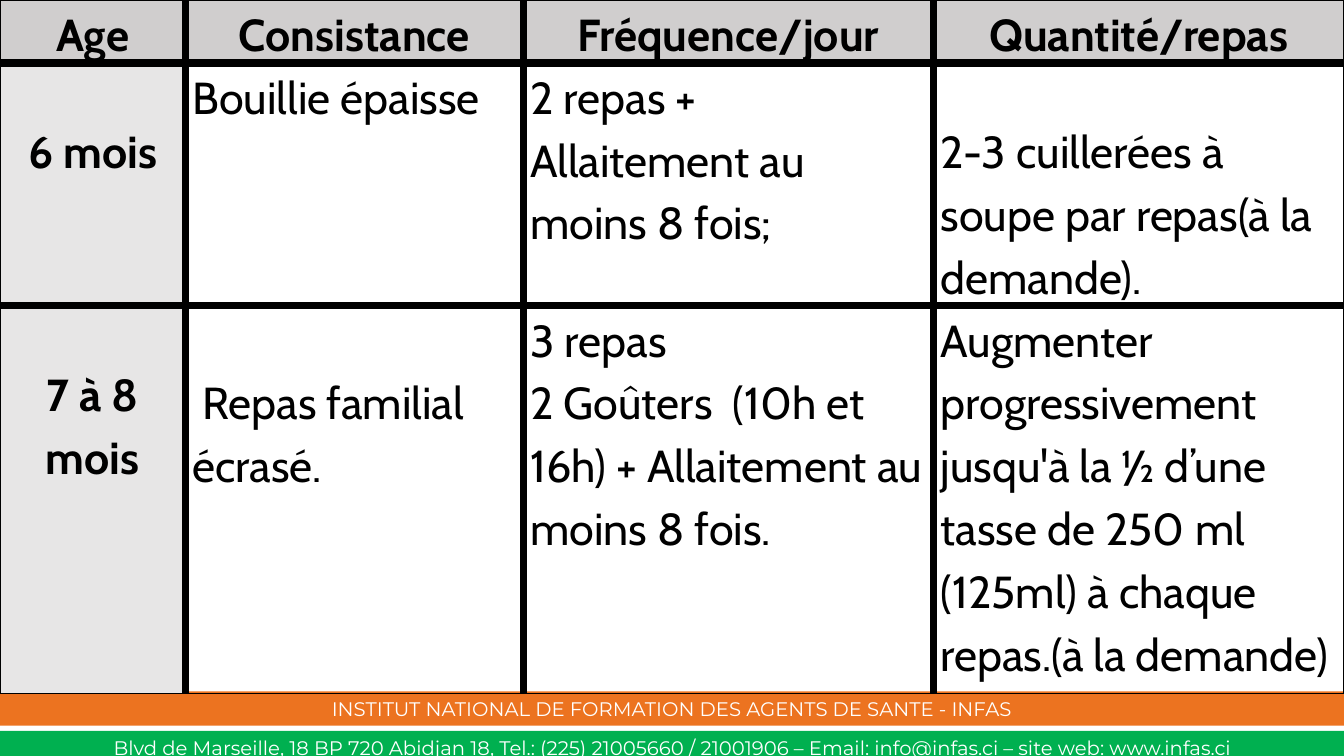
from lxml import etree
from pptx import Presentation
from pptx.dml.color import RGBColor
from pptx.enum.shapes import MSO_SHAPE
from pptx.enum.text import MSO_ANCHOR, PP_ALIGN
from pptx.oxml.ns import qn
from pptx.util import Inches, Pt

RECT = MSO_SHAPE.RECTANGLE
CENTER, LEFT = PP_ALIGN.CENTER, PP_ALIGN.LEFT
MIDDLE, BOTTOM = MSO_ANCHOR.MIDDLE, MSO_ANCHOR.BOTTOM

BLACK = RGBColor(0x00, 0x00, 0x00)
WHITE = RGBColor(0xFF, 0xFF, 0xFF)
HEADER_GRAY = RGBColor(0xD0, 0xCE, 0xCE)
AGE_GRAY = RGBColor(0xE7, 0xE6, 0xE6)
ORANGE = RGBColor(0xEC, 0x73, 0x20)
GREEN = RGBColor(0x00, 0xB0, 0x50)

ROWS = [
    ["Age", "Consistance", "Fréquence/jour", "Quantité/repas"],
    ["6 mois", "Bouillie épaisse",
     "2 repas +\nAllaitement au moins 8 fois;",
     "2-3 cuillerées à soupe par repas(à la demande)."],
    ["7 à 8 mois", "Repas familial écrasé.",
     "3 repas\n2 Goûters  (10h et 16h) + Allaitement au moins 8 fois.",
     "Augmenter progressivement jusqu'à la ½ d’une tasse de 250 ml "
     "(125ml) à chaque repas.(à la demande)"],
]
COL_WIDTHS = [1.84, 3.35, 4.07, 4.07]
ROW_HEIGHTS = [0.62, 2.37, 3.85]
TOP_MARGINS = {(1, 0): 0.54, (1, 3): 0.54, (2, 0): 0.54, (2, 1): 0.62}
FIRST_LINE_INDENTS = {(2, 1): 0.1}
OUTER_BORDER, INNER_BORDER = 1, 6

# text, left, top, width, height, colour, anchor, vertical inset
FOOTER_BANDS = [
    ("Blvd de Marseille, 18 BP 720 Abidjan 18, Tel.: (225) 21005660 / 21001906 "
     "– Email: info@infas.ci – site web: www.infas.ci",
     0, 7.25, 13.35, 0.28, GREEN, BOTTOM, 0),
    ("INSTITUT NATIONAL DE FORMATION DES AGENTS DE SANTE - INFAS",
     0, 6.86, 13.33, 0.34, ORANGE, MIDDLE, 0.05),
]


def style_runs(p, font, size, color, bold=False):
    for r in p.runs:
        r.font.name = font
        r.font.size = Pt(size)
        r.font.color.rgb = color
        r.font.bold = bold


def set_borders(cell, widths):
    """Draw black cell borders; widths are points for left, right, top, bottom."""
    tcPr = cell._tc.get_or_add_tcPr()
    for i, (side, width) in enumerate(zip("LRTB", widths)):
        ln = etree.Element(qn(f"a:ln{side}"), w=str(Pt(width)))
        fill = etree.SubElement(ln, qn("a:solidFill"))
        etree.SubElement(fill, qn("a:srgbClr"), val=str(BLACK))
        tcPr.insert(i, ln)


def add_footer_band(slide, text, left, top, width, height, color, anchor, inset):
    sp = slide.shapes.add_shape(RECT, Inches(left), Inches(top),
                                Inches(width), Inches(height))
    sp.shadow.inherit = False
    sp.fill.solid()
    sp.fill.fore_color.rgb = color
    sp.line.fill.background()
    tf = sp.text_frame
    tf.word_wrap = True
    tf.vertical_anchor = anchor
    tf.margin_top = tf.margin_bottom = Inches(inset)
    tf.text = text
    p = tf.paragraphs[0]
    p.alignment = CENTER
    style_runs(p, "Montserrat", 14, WHITE)


def fill_cell(cell, row, col):
    is_label = row == 0 or col == 0
    if is_label:
        cell.fill.solid()
        cell.fill.fore_color.rgb = HEADER_GRAY if row == 0 else AGE_GRAY
    else:
        cell.fill.background()
    edges = (col == 0, col == len(COL_WIDTHS) - 1, row == 0, row == len(ROWS) - 1)
    set_borders(cell, [OUTER_BORDER if edge else INNER_BORDER for edge in edges])

    cell.margin_left = cell.margin_right = Inches(0.07)
    cell.margin_top = Inches(TOP_MARGINS.get((row, col), 0))
    cell.margin_bottom = 0
    cell.text_frame.text = ROWS[row][col]
    for p in cell.text_frame.paragraphs:
        p.alignment = CENTER if is_label else LEFT
        p.line_spacing = 1.15
        style_runs(p, "Cabin", 32, BLACK, is_label)
        if (row, col) in FIRST_LINE_INDENTS:
            indent = Inches(FIRST_LINE_INDENTS[row, col])
            p._p.get_or_add_pPr().set("indent", str(indent))


def add_meal_table(slide):
    frame = slide.shapes.add_table(len(ROWS), len(COL_WIDTHS), 0, 0,
                                   Inches(sum(COL_WIDTHS)), Inches(sum(ROW_HEIGHTS)))
    table = frame.table
    table.first_row = table.horz_banding = False
    for column, width in zip(table.columns, COL_WIDTHS):
        column.width = Inches(width)
    for row, height in enumerate(ROW_HEIGHTS):
        table.rows[row].height = Inches(height)
        for col in range(len(COL_WIDTHS)):
            fill_cell(table.cell(row, col), row, col)


def main():
    prs = Presentation()
    prs.slide_width, prs.slide_height = Inches(13.33), Inches(7.5)
    slide = prs.slides.add_slide(prs.slide_layouts[6])
    for band in FOOTER_BANDS:
        add_footer_band(slide, *band)
    add_meal_table(slide)
    prs.save("out.pptx")


if __name__ == "__main__":
    main()
